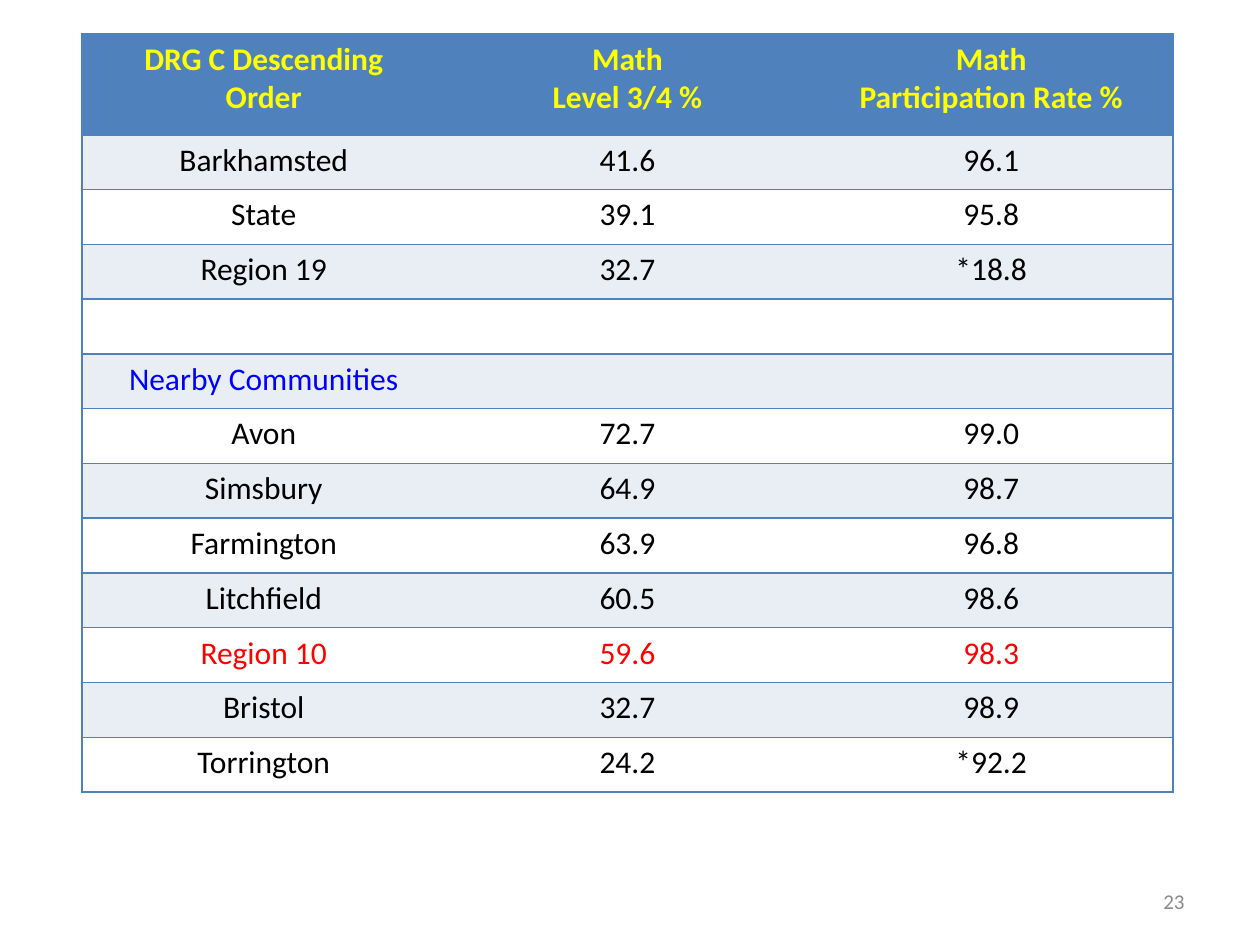
from lxml import etree
from pptx import Presentation
from pptx.dml.color import RGBColor
from pptx.enum import text
from pptx.oxml import ns
from pptx.util import Inches, Pt

COLORS = {
    "blue": "4F81BD", "band": "E9EDF4", "white": "FFFFFF", "yellow": "FFFF00",
    "black": "000000", "link_blue": "0000FF", "red": "FF0000", "gray": "898989",
}
FONT = "Calibri"
HEADER = ("DRG C Descending\nOrder", "Math\nLevel 3/4 %", "Math\nParticipation Rate %")
SCORES = [
    ("Barkhamsted", "41.6", "96.1"),
    ("State", "39.1", "95.8"),
    ("Region 19", "32.7", "*18.8"),
    ("", "", ""),
    ("Nearby Communities", "", ""),
    ("Avon", "72.7", "99.0"),
    ("Simsbury", "64.9", "98.7"),
    ("Farmington", "63.9", "96.8"),
    ("Litchfield", "60.5", "98.6"),
    ("Region 10", "59.6", "98.3"),
    ("Bristol", "32.7", "98.9"),
    ("Torrington", "24.2", "*92.2"),
]
ROW_COLORS = {"Nearby Communities": "link_blue", "Region 10": "red"}


def format_text(frame, size, color, alignment, bold=False):
    """Give every paragraph of a text frame the same font and alignment."""
    for paragraph in frame.paragraphs:
        paragraph.alignment = alignment
        paragraph.font.name = FONT
        paragraph.font.size = Pt(size)
        paragraph.font.bold = bold
        paragraph.font.color.rgb = RGBColor.from_string(COLORS[color])


def set_borders(cell, visible_sides):
    """Draw blue lines on the visible sides of a cell and clear the others."""
    properties = cell._tc.get_or_add_tcPr()
    for side in "LRTB":
        line = etree.SubElement(properties, ns.qn(f"a:ln{side}"), w=str(Pt(1)))
        if side in visible_sides:
            fill = etree.SubElement(line, ns.qn("a:solidFill"))
            etree.SubElement(fill, ns.qn("a:srgbClr"), val=COLORS["blue"])
        else:
            etree.SubElement(line, ns.qn("a:noFill"))


def add_score_table(slide, left, top, width, height, header_height):
    """Place the table of math results in the given box."""
    rows = [HEADER, *SCORES]
    last_column = len(HEADER) - 1
    table = slide.shapes.add_table(
        len(rows), len(HEADER), left, top, width, height).table
    table.first_row = table.horz_banding = False
    for column in table.columns:
        column.width = width // len(HEADER)
    for row_index, values in enumerate(rows):
        is_header = row_index == 0
        table.rows[row_index].height = (
            header_height if is_header else (height - header_height) // len(SCORES))
        fill = "blue" if is_header else ("white", "band")[row_index % 2]
        color = "yellow" if is_header else ROW_COLORS.get(values[0], "black")
        for column_index, value in enumerate(values):
            cell = table.cell(row_index, column_index)
            cell.text = value
            format_text(cell.text_frame, 18, color, text.PP_ALIGN.CENTER, is_header)
            sides = "TB" + "L" * (column_index == 0) + "R" * (column_index == last_column)
            set_borders(cell, sides)
            cell.fill.solid()
            cell.fill.fore_color.rgb = RGBColor.from_string(COLORS[fill])


def add_slide_number(slide, left, top, width, height):
    """Place the slide number at the right of the given box."""
    frame = slide.shapes.add_textbox(left, top, width, height).text_frame
    frame.word_wrap = True
    frame.vertical_anchor = text.MSO_ANCHOR.MIDDLE
    frame.text = "23"
    format_text(frame, 12, "gray", text.PP_ALIGN.RIGHT)


def main():
    """Build and save the slide."""
    presentation = Presentation()
    presentation.slide_width, presentation.slide_height = Inches(10), Inches(7.5)
    slide = presentation.slides.add_slide(presentation.slide_layouts[6])
    add_score_table(slide, Inches(0.65), Inches(0.27), Inches(8.66), Inches(6.02), Inches(0.8))
    add_slide_number(slide, Inches(7.17), Inches(6.95), Inches(2.33), Inches(0.4))
    presentation.save("out.pptx")


if __name__ == "__main__":
    main()
